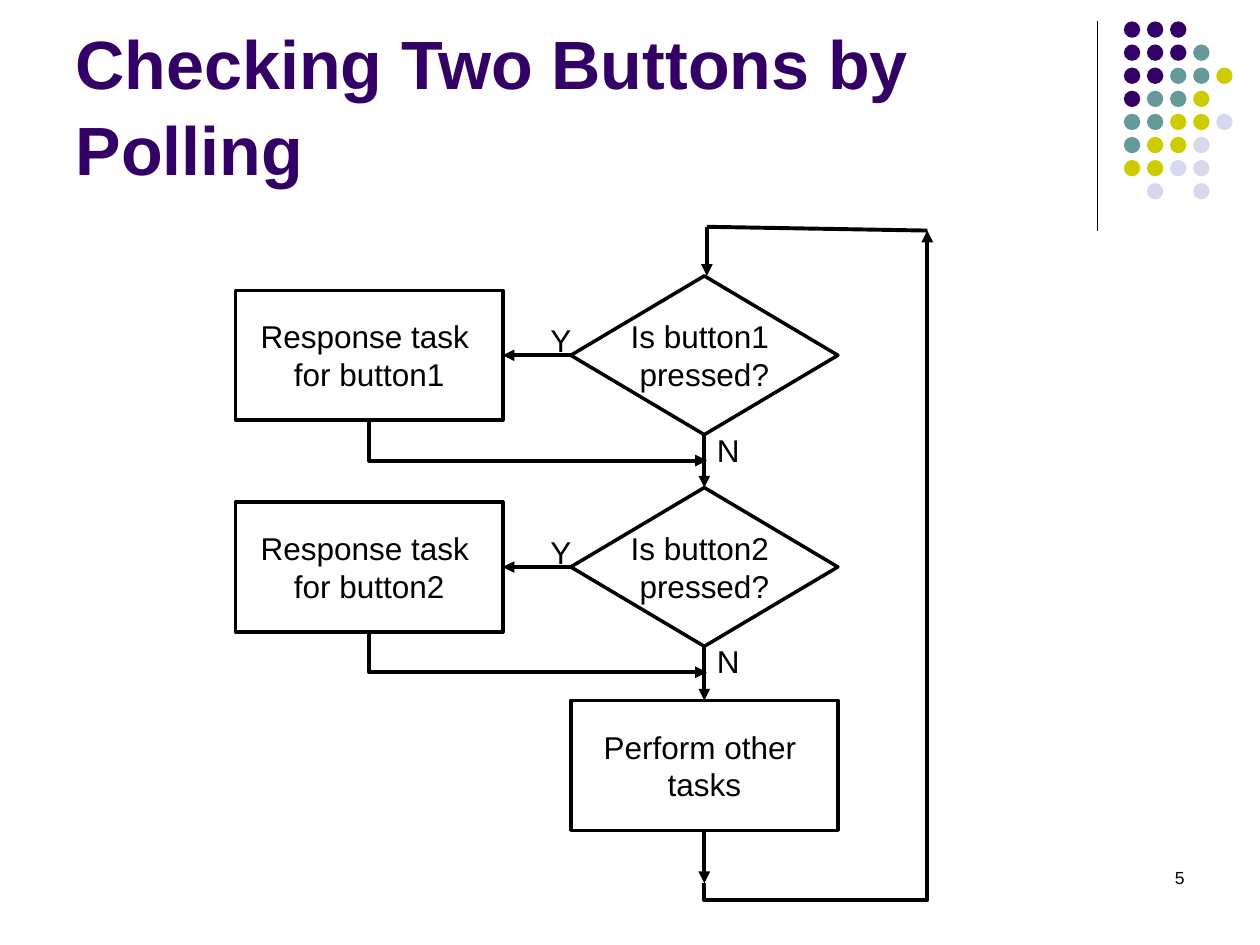
import dataclasses
import pptx
import pptx.dml.color
import pptx.enum.shapes
import pptx.enum.text
import pptx.oxml.ns
import pptx.util
from lxml import etree

Inches = pptx.util.Inches
Pt = pptx.util.Pt
Shape = pptx.enum.shapes.MSO_SHAPE
Connector = pptx.enum.shapes.MSO_CONNECTOR
Align = pptx.enum.text.PP_ALIGN
Anchor = pptx.enum.text.MSO_ANCHOR
AutoSize = pptx.enum.text.MSO_AUTO_SIZE
qn = pptx.oxml.ns.qn


@dataclasses.dataclass(frozen=True)
class Theme:
    font: str = "Arial"
    ink: str = "000000"
    paper: str = "FFFFFF"
    purple: str = "330066"
    teal: str = "669999"
    olive: str = "CCCC00"
    lilac: str = "D8D8EC"
    title_size: int = 39
    body_size: int = 18
    number_size: int = 10
    outline: float = 2
    arrow: float = 2.25
    rule: float = 0.75


THEME = Theme()
DOT_ROWS = ("PPP", "PPPT", "PPTTO", "PTTO", "TTOOL", "TOOL", "OOLL", " L L")
DOT_COLORS = {"P": THEME.purple, "T": THEME.teal, "O": THEME.olive, "L": THEME.lilac}
NODE_WIDTH, DECISION_HEIGHT, PROCESS_HEIGHT = 2.12, 1.26, 1.03
MAIN_LEFT, RESPONSE_LEFT = 4.53, 1.87
MAIN_CENTER = MAIN_LEFT + NODE_WIDTH / 2
DECISION_TOPS = (2.19, 3.87)
TASKS_TOP = 5.56
LOOP_X, LOOP_TOP = 7.36, 1.83
ENTRY_X, ENTRY_TOP = 5.61, 1.8
EXIT_Y = 7.01


def color(value):
    return pptx.dml.color.RGBColor.from_string(value)


def write(box, text, size=THEME.body_size, ink=THEME.ink, bold=False,
          align=Align.LEFT, anchor=Anchor.TOP, wrap=False,
          auto_size=AutoSize.NONE, spacing=None):
    frame = box.text_frame
    frame.text = text
    frame.word_wrap = wrap
    frame.auto_size = auto_size
    frame.vertical_anchor = anchor
    for para in frame.paragraphs:
        para.alignment = align
        para.line_spacing = spacing
        for span in para.runs:
            span.font.name = THEME.font
            span.font.size = Pt(size)
            span.font.bold = bold
            span.font.color.rgb = color(ink)


def add_node(page, kind, left, top, height, text):
    node = page.shapes.add_shape(
        kind, Inches(left), Inches(top), Inches(NODE_WIDTH), Inches(height))
    node.shadow.inherit = False
    node.fill.solid()
    node.fill.fore_color.rgb = color(THEME.paper)
    node.line.color.rgb = color(THEME.ink)
    node.line.width = Pt(THEME.outline)
    write(node, text, align=Align.CENTER, anchor=Anchor.MIDDLE)


def add_label(page, left, top, width, text):
    label = page.shapes.add_textbox(Inches(left), Inches(top), Inches(width), Inches(0.4))
    write(label, text, auto_size=AutoSize.SHAPE_TO_FIT_TEXT)


def add_line(page, start, end, width=THEME.arrow, arrow=True, kind=Connector.STRAIGHT):
    line = page.shapes.add_connector(kind, *map(Inches, (*start, *end)))
    line.line.color.rgb = color(THEME.ink)
    line.line.width = Pt(width)
    if arrow:
        etree.SubElement(line.line._get_or_add_ln(), qn("a:tailEnd"), type="triangle")
    etree.SubElement(line.element.spPr, qn("a:effectLst"))
    return line


def add_elbow(page, start, end, preset, turn, bend=None):
    sign = 1 if turn == 90 else -1
    center_x, center_y = (start[0] + end[0]) / 2, (start[1] + end[1]) / 2
    across = sign * (end[1] - start[1]) / 2
    down = sign * (end[0] - start[0]) / 2
    line = add_line(page, (center_x - across, center_y + down),
                    (center_x + across, center_y - down), kind=Connector.ELBOW)
    properties = line.element.spPr
    properties.find(qn("a:xfrm")).set("rot", str(turn * 60000))
    geometry = properties.find(qn("a:prstGeom"))
    geometry.set("prst", preset)
    if bend is not None:
        guides = geometry.find(qn("a:avLst"))
        if guides is None:
            guides = etree.SubElement(geometry, qn("a:avLst"))
        etree.SubElement(guides, qn("a:gd"), name="adj1", fmla=f"val {round(bend * 100000)}")


def add_dots(page):
    step = 0.55 / 3
    for row, codes in enumerate(DOT_ROWS):
        for column, code in enumerate(codes):
            if code in DOT_COLORS:
                dot = page.shapes.add_shape(
                    Shape.OVAL, Inches(8.92 + column * step), Inches(0.17 + row * step),
                    Inches(0.13), Inches(0.13))
                dot.shadow.inherit = False
                dot.fill.solid()
                dot.fill.fore_color.rgb = color(DOT_COLORS[code])
                dot.line.fill.background()


def add_heading(page):
    title = page.shapes.title
    title.left, title.top = Inches(0.5), Inches(0.13)
    title.width, title.height = Inches(8.25), Inches(1.42)
    write(title, "Checking Two Buttons by Polling", size=THEME.title_size,
          ink=THEME.purple, bold=True, anchor=Anchor.BOTTOM, wrap=True, spacing=1.05)


def add_page_number(page):
    number = page.shapes.add_textbox(Inches(7.17), Inches(6.83), Inches(2.33), Inches(0.5))
    write(number, "5", size=THEME.number_size, align=Align.RIGHT, wrap=True)


def add_button_check(page, number, top, next_top):
    middle = top + DECISION_HEIGHT / 2
    bottom = top + DECISION_HEIGHT
    response_top = middle - PROCESS_HEIGHT / 2
    response_bottom = response_top + PROCESS_HEIGHT
    response_center = RESPONSE_LEFT + NODE_WIDTH / 2
    add_node(page, Shape.FLOWCHART_DECISION, MAIN_LEFT, top, DECISION_HEIGHT,
             f"Is button{number} \vpressed?")
    add_node(page, Shape.FLOWCHART_PROCESS, RESPONSE_LEFT, response_top, PROCESS_HEIGHT,
             f"Response task \vfor button{number}")
    add_line(page, (MAIN_LEFT, middle), (RESPONSE_LEFT + NODE_WIDTH, middle))
    add_line(page, (MAIN_CENTER, bottom), (MAIN_CENTER, next_top))
    add_elbow(page, (response_center, response_bottom),
              (MAIN_CENTER + 0.02, response_bottom + 0.32), "bentConnector2", 270)
    add_label(page, 4.27, top + 0.31, 0.37, "Y")
    add_label(page, MAIN_CENTER, bottom - 0.08, 0.38, "N")


def add_loop(page):
    add_line(page, (MAIN_CENTER, TASKS_TOP + PROCESS_HEIGHT), (MAIN_CENTER, EXIT_Y))
    add_elbow(page, (MAIN_CENTER, EXIT_Y), (LOOP_X, LOOP_TOP), "bentConnector3", 90, bend=-0.026)
    add_line(page, (ENTRY_X, ENTRY_TOP), (LOOP_X, LOOP_TOP), arrow=False)
    add_line(page, (ENTRY_X, ENTRY_TOP), (ENTRY_X, DECISION_TOPS[0]))


def main():
    deck = pptx.Presentation()
    deck.slide_width, deck.slide_height = Inches(10), Inches(7.5)
    page = deck.slides.add_slide(deck.slide_layouts.get_by_name("Title Only"))
    add_heading(page)
    add_line(page, (8.71, 0.17), (8.71, 1.83), width=THEME.rule, arrow=False)
    add_dots(page)
    add_page_number(page)
    next_tops = (*DECISION_TOPS[1:], TASKS_TOP)
    for number, (top, next_top) in enumerate(zip(DECISION_TOPS, next_tops), start=1):
        add_button_check(page, number, top, next_top)
    add_node(page, Shape.FLOWCHART_PROCESS, MAIN_LEFT, TASKS_TOP, PROCESS_HEIGHT,
             "Perform other \vtasks")
    add_loop(page)
    deck.save("out.pptx")


if __name__ == "__main__":
    main()
